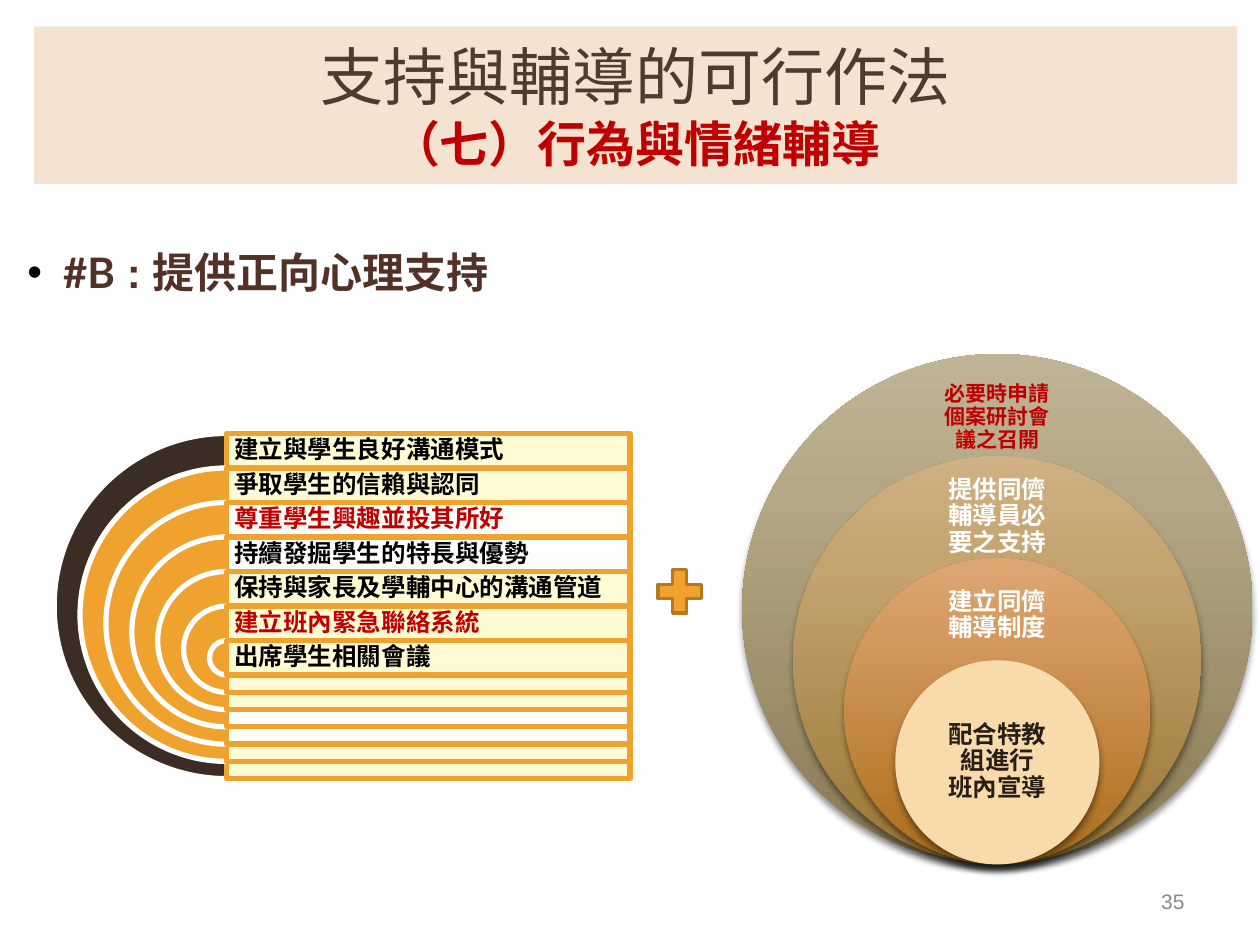
from dataclasses import dataclass

from lxml import etree
from pptx import Presentation
from pptx.dml.color import RGBColor
from pptx.enum.shapes import MSO_SHAPE
from pptx.enum.text import MSO_ANCHOR, PP_ALIGN
from pptx.oxml import parse_xml
from pptx.oxml.ns import qn
from pptx.util import Inches, Pt

RECT, PIE, OVAL, PLUS = MSO_SHAPE.RECTANGLE, MSO_SHAPE.PIE, MSO_SHAPE.OVAL, MSO_SHAPE.MATH_PLUS
MIDDLE = MSO_ANCHOR.MIDDLE
LEFT, CENTER, RIGHT = PP_ALIGN.LEFT, PP_ALIGN.CENTER, PP_ALIGN.RIGHT

GRID_COLUMNS = 100
SLIDE_WIDTH, SLIDE_HEIGHT = Inches(10), Inches(7.5)
CELL = SLIDE_WIDTH / GRID_COLUMNS

ORANGE, CREAM, WHITE, BLACK, RED = "F0A22E", "FEFBD4", "FFFFFF", "000000", "C00000"
DRAWING_NS = "http://schemas.openxmlformats.org/drawingml/2006/main"


@dataclass(frozen=True)
class Box:
    column: float
    row: float
    columns: float
    rows: float

    def emu(self) -> list[int]:
        return [round(side * CELL) for side in (self.column, self.row, self.columns, self.rows)]


@dataclass(frozen=True)
class Line:
    text: str
    size: float
    color: str
    font: str = "Arial"
    bold: bool = True


@dataclass(frozen=True)
class Practice:
    text: str
    color: str = BLACK
    band: str = CREAM
    arc: str = ORANGE


@dataclass(frozen=True)
class Ring:
    lines: list[str]
    size: float
    color: str
    stops: list[str]
    label: Box
    inset: float = 0.11


PRACTICES = [
    Practice("建立與學生良好溝通模式", arc="3B2C24"),
    Practice("爭取學生的信賴與認同"),
    Practice("尊重學生興趣並投其所好", RED, WHITE),
    Practice("持續發掘學生的特長與優勢", band=WHITE),
    Practice("保持與家長及學輔中心的溝通管道"),
    Practice("建立班內緊急聯絡系統", RED),
    Practice("出席學生相關會議"),
]

RINGS = [
    Ring(["必要時申請個案研討會議之召開"], 12, RED, ["887A53", "B4A785", "C0B496"],
         Box(73.5, 30.1, 11.3, 6.1), 0.09),
    Ring(["提供同儕輔導員必要之支持"], 14, WHITE, ["9A7735", "C3A36E", "CFB183"],
         Box(73.5, 38.1, 11.3, 5.8)),
    Ring(["建立同儕輔導制度"], 14, WHITE, ["AB6D19", "D2985C", "DDA774"],
         Box(73.5, 46.1, 11.3, 5.5)),
    Ring(["配合特教組進行", "班內宣導"], 14, "271E18", ["F9DAAB"],
         Box(73.4, 56.4, 11.5, 8.1)),
]


def rgb(color: str) -> RGBColor:
    return RGBColor.from_string(color)


def add_figure(slide, kind, box: Box, fill: str, outline: str = "", width: float = 3):
    figure = slide.shapes.add_shape(kind, *box.emu())
    figure.shadow.inherit = False
    figure.fill.solid()
    figure.fill.fore_color.rgb = rgb(fill)
    if outline:
        figure.line.color.rgb = rgb(outline)
        figure.line.width = Pt(width)
    else:
        figure.line.fill.background()
    return figure


def write_lines(frame, lines: list[Line], align, spacing: float = 1.0) -> None:
    frame.word_wrap = True
    frame.vertical_anchor = MIDDLE
    for index, line in enumerate(lines):
        paragraph = frame.paragraphs[0] if index == 0 else frame.add_paragraph()
        paragraph.text = line.text
        paragraph.alignment = align
        paragraph.line_spacing = spacing
        style(paragraph.font, line)


def style(font, line: Line) -> None:
    font.name = line.font
    font.size = Pt(line.size)
    font.bold = line.bold
    font.color.rgb = rgb(line.color)


def add_label(slide, box: Box, lines: list[Line], align, spacing: float, inset: float) -> None:
    frame = slide.shapes.add_textbox(*box.emu()).text_frame
    frame.margin_left = frame.margin_right = Inches(inset)
    frame.margin_top = frame.margin_bottom = Inches(inset)
    write_lines(frame, lines, align, spacing)


def set_opacity(figure, percent: int) -> None:
    color = figure.fill._xPr.find(qn("a:solidFill"))[0]
    etree.SubElement(color, qn("a:alpha")).set("val", str(percent * 1000))


def set_gradient(figure, colors: list[str]) -> None:
    stops = "".join(
        f'<a:gs pos="{position * 1000}"><a:srgbClr val="{color}"/></a:gs>'
        for position, color in zip((0, 72, 100), colors)
    )
    properties = figure._element.spPr
    properties.replace(properties.find(qn("a:solidFill")), parse_xml(
        f'<a:gradFill xmlns:a="{DRAWING_NS}" rotWithShape="1"><a:gsLst>{stops}</a:gsLst>'
        '<a:lin ang="16200000" scaled="0"/></a:gradFill>'))


def cast_shadow(figure) -> None:
    effects = figure._element.spPr.find(qn("a:effectLst"))
    effects.append(parse_xml(
        f'<a:outerShdw xmlns:a="{DRAWING_NS}" blurRad="{Pt(4)}" dist="{Pt(3)}" dir="5400000" '
        'rotWithShape="0"><a:srgbClr val="000000"><a:alpha val="43000"/></a:srgbClr></a:outerShdw>'))


def draw_practices(slide) -> None:
    center, top, pitch, width = 18, 34.4, 2.74, 32
    for index, practice in enumerate(PRACTICES):
        row = top + index * pitch
        diameter = pitch * (10 - 1.5 * index)
        arc = add_figure(slide, PIE, Box(center - diameter / 2, row, diameter, diameter),
                         practice.arc, WHITE)
        arc.adjustments[0], arc.adjustments[1] = 54, 162
        band = add_figure(slide, RECT, Box(center, row, width, diameter), practice.band, ORANGE)
        if practice.band == WHITE:
            set_opacity(band, 90)
        add_label(slide, Box(center, row, width, pitch),
                  [Line(practice.text, 14, practice.color)], LEFT, 0.9, 0.06)


def draw_rings(slide) -> None:
    center, bottom, largest = 79.15, 68.6, 40.5
    for index, ring in enumerate(RINGS):
        diameter = largest * (1 - index / 5)
        disc = add_figure(slide, OVAL, Box(center - diameter / 2, bottom - diameter,
                                           diameter, diameter), ring.stops[0])
        if len(ring.stops) > 1:
            set_gradient(disc, ring.stops)
        cast_shadow(disc)
        lines = [Line(text, ring.size, ring.color, "Noto Sans CJK SC") for text in ring.lines]
        add_label(slide, ring.label, lines, CENTER, 0.9, ring.inset)


def draw_topic(slide) -> None:
    frame = slide.shapes.add_textbox(*Box(1.2, 17, 91.4, 7.1).emu()).text_frame
    frame.word_wrap = True
    frame.vertical_anchor = MIDDLE
    paragraph = frame.paragraphs[0]
    paragraph.line_spacing = 1.5
    properties = paragraph._p.get_or_add_pPr()
    properties.set("marL", str(Inches(0.19)))
    properties.set("indent", str(-Inches(0.19)))
    etree.SubElement(properties, qn("a:buFont")).set("typeface", "Arial")
    etree.SubElement(properties, qn("a:buChar")).set("char", "•")
    for part in (Line(" ", 24, BLACK), Line("#B", 24, "523227", "Lato"),
                 Line(" : 提供正向心理支持", 24, "523227")):
        run = paragraph.add_run()
        run.text = part.text
        style(run.font, part)


def main() -> None:
    deck = Presentation()
    deck.slide_width, deck.slide_height = SLIDE_WIDTH, SLIDE_HEIGHT
    slide = deck.slides.add_slide(deck.slide_layouts[6])
    draw_practices(slide)
    add_figure(slide, PLUS, Box(51.6, 44.6, 4.7, 4.7), ORANGE, "B27822", 2)
    draw_rings(slide)
    draw_topic(slide)
    banner = add_figure(slide, RECT, Box(2.7, 2.1, 95.5, 12.5), "F5E3D1")
    write_lines(banner.text_frame, [
        Line("支持與輔導的可行作法", 36, "4E3B30", bold=False),
        Line("（七）行為與情緒輔導", 28, RED, "Montserrat"),
    ], CENTER)
    add_label(slide, Box(71.7, 69.5, 23.3, 4), [Line("35", 12, "898989", bold=False)],
              RIGHT, 1.0, 0.1)
    deck.save("out.pptx")


if __name__ == "__main__":
    main()
